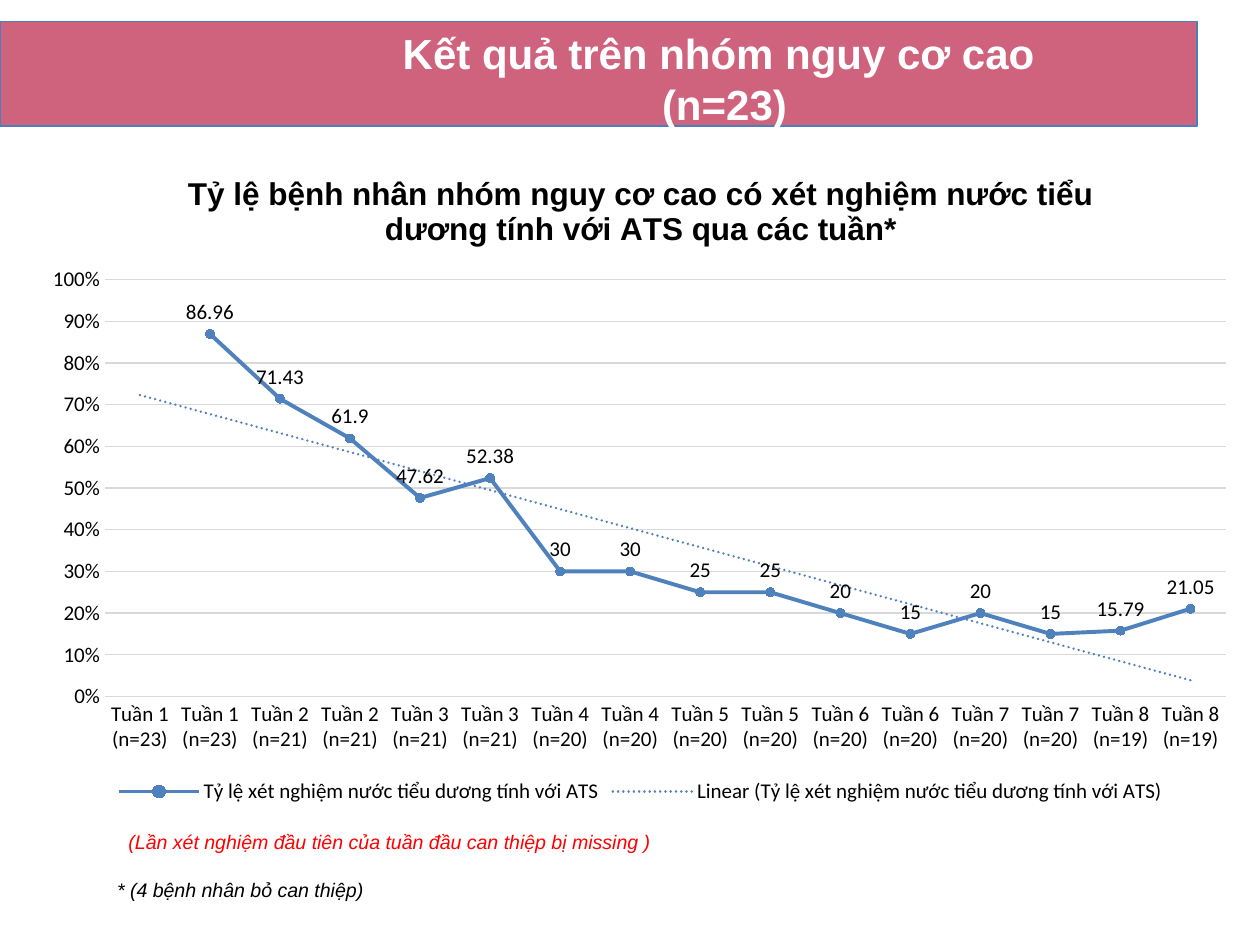
from lxml import etree
from pptx import Presentation
from pptx.chart.data import CategoryChartData
from pptx.dml.color import RGBColor
from pptx.enum.chart import (XL_CHART_TYPE, XL_LABEL_POSITION, XL_LEGEND_POSITION,
                             XL_MARKER_STYLE, XL_TICK_MARK)
from pptx.enum.shapes import MSO_SHAPE
from pptx.enum.text import MSO_ANCHOR, PP_ALIGN
from pptx.oxml import parse_xml
from pptx.oxml.ns import nsdecls, qn
from pptx.util import Cm, Pt

RECT = MSO_SHAPE.RECTANGLE
CENTER, MIDDLE = PP_ALIGN.CENTER, MSO_ANCHOR.MIDDLE
LINE_MARKERS, CIRCLE = XL_CHART_TYPE.LINE_MARKERS, XL_MARKER_STYLE.CIRCLE
NO_TICK, ABOVE = XL_TICK_MARK.NONE, XL_LABEL_POSITION.ABOVE
BOTTOM = XL_LEGEND_POSITION.BOTTOM

BLUE, GRID, BLACK = "4F81BD", "D9D9D9", "000000"
PATIENTS = [23, 21, 21, 20, 20, 20, 20, 19]  # tested per week, two tests a week
RATES = [None, 86.96, 71.43, 61.9, 47.62, 52.38, 30, 30,
         25, 25, 20, 15, 20, 15, 15.79, 21.05]


def rgb(value):
    return RGBColor.from_string(value)


def set_font(font, size, color, name, bold=False, italic=False):
    font.size, font.name = Pt(size), name
    font.bold, font.italic = bold, italic
    font.color.rgb = rgb(color)


def set_line(line, color, width):
    line.color.rgb = rgb(color)
    line.width = Pt(width)


def add_header(slide, x, y, w, h):
    # Translucent band
    sp = slide.shapes.add_shape(RECT, Cm(x), Cm(y), Cm(w), Cm(h))
    sp.shadow.inherit = False
    sp.fill.solid()
    sp.fill.fore_color.rgb = rgb("C02F52")
    color = sp.fill._xPr.find(qn("a:solidFill"))[0]
    etree.SubElement(color, qn("a:alpha"), val="75000")
    set_line(sp.line, "4B7EBC", 0.75)

    # Title, moved in front of the band
    title = slide.shapes.title
    title.left, title.top = Cm(x + 5.08), Cm(y)
    title.width, title.height = Cm(w - 5.08), Cm(h + 0.18)
    slide.shapes._spTree.append(title._element)
    tf = title.text_frame
    tf.word_wrap, tf.vertical_anchor = True, MIDDLE
    p = tf.paragraphs[0]
    p.alignment = CENTER
    for i, text in enumerate(["Kết quả trên nhóm nguy cơ cao ", "(n=23)"]):
        if i:
            p.add_line_break()
        r = p.add_run()
        r.text = text
        set_font(r.font, 24, "FFFFFF", "Arial", bold=True)


def add_trendline(series):
    trend = parse_xml(
        f'<c:trendline {nsdecls("c", "a")}><c:spPr><a:ln w="19050" cap="rnd">'
        f'<a:solidFill><a:srgbClr val="{BLUE}"/></a:solidFill><a:prstDash val="sysDot"/>'
        '</a:ln></c:spPr><c:trendlineType val="linear"/><c:dispRSqr val="0"/>'
        '<c:dispEq val="0"/></c:trendline>')
    series._element.find(qn("c:cat")).addprevious(trend)


def set_plot_box(chart, x, y, w, h):
    """Fix the inner plot area, in fractions of the chart."""
    area = chart._chartSpace.find(".//" + qn("c:plotArea"))
    old = area.find(qn("c:layout"))
    if old is not None:
        area.remove(old)
    area.insert(0, parse_xml(
        f'<c:layout {nsdecls("c")}><c:manualLayout><c:layoutTarget val="inner"/>'
        '<c:xMode val="edge"/><c:yMode val="edge"/>'
        f'<c:x val="{x}"/><c:y val="{y}"/><c:w val="{w}"/><c:h val="{h}"/>'
        '</c:manualLayout></c:layout>'))


def add_rate_chart(slide, x, y, w, h):
    data = CategoryChartData()
    data.categories = [f"Tuần {week} (n={n})"
                       for week, n in enumerate(PATIENTS, 1) for _ in range(2)]
    data.add_series("Tỷ lệ xét nghiệm nước tiểu dương tính với ATS", RATES)
    chart = slide.shapes.add_chart(LINE_MARKERS, Cm(x), Cm(y), Cm(w), Cm(h), data).chart
    set_font(chart.font, 12, BLACK, "Calibri")
    set_plot_box(chart, 0.06, 0.2, 0.92, 0.63)

    # Title
    chart.has_title = True
    r = chart.chart_title.text_frame.paragraphs[0].add_run()
    r.text = ("Tỷ lệ bệnh nhân nhóm nguy cơ cao có xét nghiệm nước tiểu "
              "dương tính với ATS qua các tuần*")
    set_font(r.font, 18, BLACK, "Arial", bold=True)

    # Legend
    chart.has_legend = True
    chart.legend.position = BOTTOM
    chart.legend.include_in_layout = False
    set_font(chart.legend.font, 12, BLACK, "Calibri")

    # Axes
    for axis in (chart.category_axis, chart.value_axis):
        axis.major_tick_mark = axis.minor_tick_mark = NO_TICK
        set_font(axis.tick_labels.font, 12, BLACK, "Calibri")
    set_line(chart.category_axis.format.line, GRID, 0.75)
    axis = chart.value_axis
    axis.minimum_scale, axis.maximum_scale, axis.major_unit = 0, 100, 10
    axis.format.line.fill.background()
    set_line(axis.major_gridlines.format.line, GRID, 0.75)
    axis.tick_labels.number_format = '#,##0"%";\\-#,##0"%"'
    axis.tick_labels.number_format_is_linked = False

    # Series, labels and trend
    plot = chart.plots[0]
    plot.vary_by_categories = False
    series = plot.series[0]
    series.smooth = False
    set_line(series.format.line, BLUE, 2.25)
    marker = series.marker
    marker.style, marker.size = CIRCLE, 5
    marker.format.fill.solid()
    marker.format.fill.fore_color.rgb = rgb(BLUE)
    set_line(marker.format.line, BLUE, 0.75)
    labels = series.data_labels
    labels.show_value, labels.position = True, ABOVE
    set_font(labels.font, 12, BLACK, "Calibri")
    add_trendline(series)


def add_note(slide, x, y, w, h, text, color):
    tf = slide.shapes.add_textbox(Cm(x), Cm(y), Cm(w), Cm(h)).text_frame
    tf.word_wrap = False
    r = tf.paragraphs[0].add_run()
    r.text = text
    set_font(r.font, 11.2, color, "Arial", italic=True)


def main():
    prs = Presentation()
    prs.slide_width, prs.slide_height = Cm(25.4), Cm(19.05)
    slide = prs.slides.add_slide(prs.slide_layouts[5])
    add_header(slide, 0, 0.43, 24.13, 2.11)
    add_rate_chart(slide, 0.64, 2.97, 24.56, 13.34)
    add_note(slide, 2.34, 16.61, 11.23, 0.74,
             "(Lần xét nghiệm đầu tiên của tuần đầu can thiệp bị missing )", "FF0000")
    add_note(slide, 2.11, 17.58, 5.56, 0.74, "* (4 bệnh nhân bỏ can thiệp)", BLACK)
    prs.save("out.pptx")


if __name__ == "__main__":
    main()
